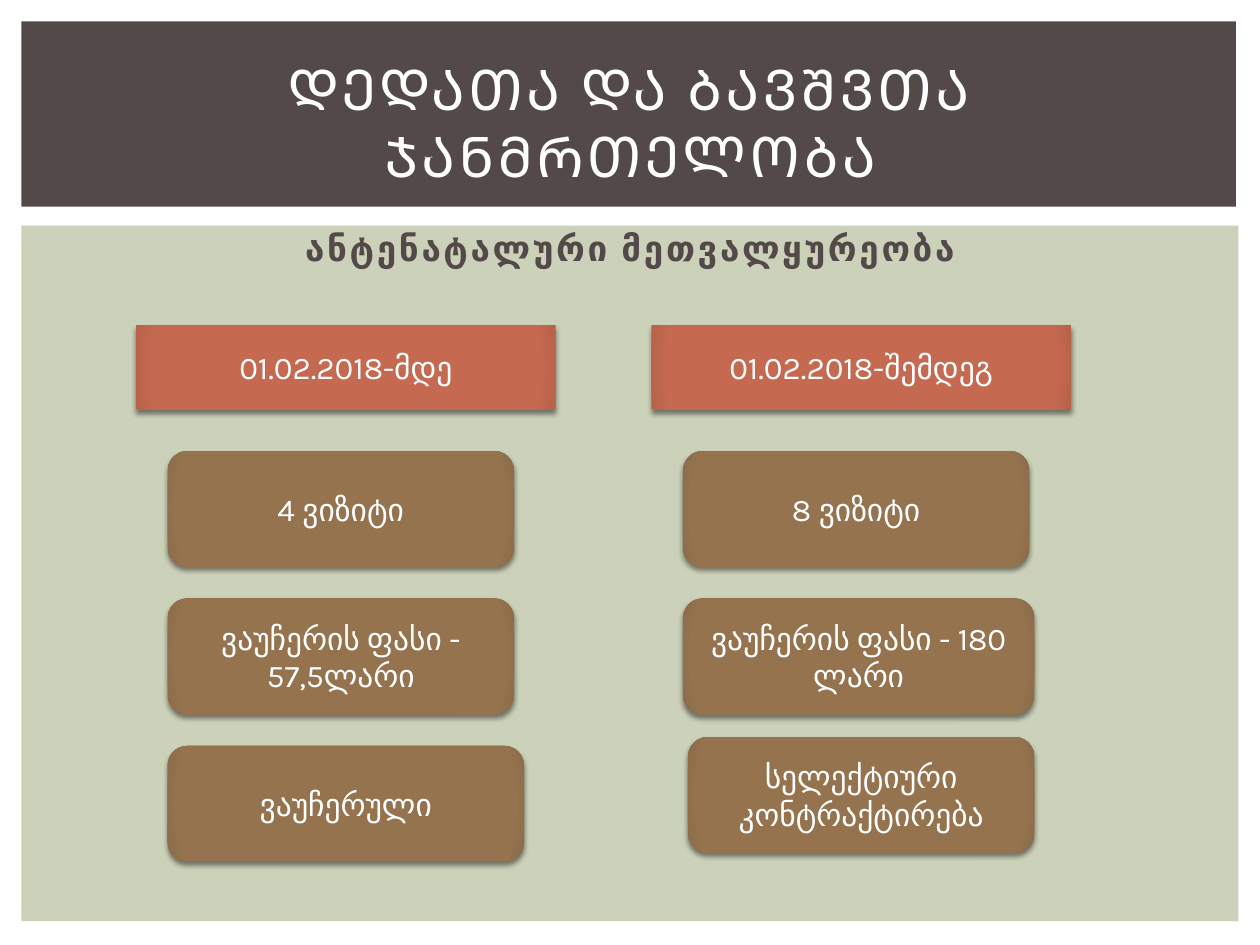
from lxml import etree
from pptx import Presentation
from pptx.dml.color import RGBColor
from pptx.enum.shapes import MSO_SHAPE
from pptx.enum.text import MSO_ANCHOR, PP_ALIGN
from pptx.oxml import parse_xml
from pptx.oxml.ns import qn
from pptx.util import Inches, Pt

RECT, ROUNDED = MSO_SHAPE.RECTANGLE, MSO_SHAPE.ROUNDED_RECTANGLE
TOP, MIDDLE = MSO_ANCHOR.TOP, MSO_ANCHOR.MIDDLE
CENTER = PP_ALIGN.CENTER

WHITE = RGBColor(0xFF, 0xFF, 0xFF)
SAGE = RGBColor(0xCC, 0xD1, 0xB9)
DARK = RGBColor(0x53, 0x49, 0x49)
RED = RGBColor(0xC6, 0x69, 0x51)
RED_EDGE = RGBColor(0xB8, 0x62, 0x4B)
BROWN = RGBColor(0x94, 0x73, 0x4E)
BROWN_EDGE = RGBColor(0x8A, 0x6B, 0x49)

GRADIENT = """<a:gradFill xmlns:a="http://schemas.openxmlformats.org/drawingml/2006/main" rotWithShape="1">
<a:gsLst><a:gs pos="0"><a:srgbClr val="{0}"/></a:gs><a:gs pos="90000"><a:srgbClr val="{0}"/></a:gs>
<a:gs pos="100000"><a:srgbClr val="{1}"/></a:gs></a:gsLst>
<a:path path="circle"><a:fillToRect l="100000" t="100000" r="100000" b="100000"/></a:path></a:gradFill>"""

# Each column: heading left, heading, then (left, top, width, text) of its boxes
COLUMNS = [
    (1.08, "01.02.2018-მდე", [
        (1.33, 3.58, 2.75, "4 ვიზიტი"),
        (1.33, 4.75, 2.75, "ვაუჩერის ფასი - 57,5ლარი"),
        (1.33, 5.92, 2.83, "ვაუჩერული")]),
    (5.17, "01.02.2018-შემდეგ", [
        (5.42, 3.58, 2.75, "8 ვიზიტი"),
        (5.42, 4.75, 2.79, "ვაუჩერის ფასი - 180 ლარი"),
        (5.46, 5.85, 2.75, "სელექტიური კონტრაქტირება")]),
]


class Page:
    font_name = "Karla"

    def __init__(self, slide):
        self.shapes = slide.shapes

    def add_text(self, shape, text, size=18, color=WHITE, bold=False,
                 tracking=0, anchor=MIDDLE, before=0):
        """Put one centred paragraph in the shape; tracking is in points."""
        frame = shape.text_frame
        frame.word_wrap = True
        frame.vertical_anchor = anchor
        para = frame.paragraphs[0]
        para.alignment = CENTER
        para.space_before = Pt(before)
        span = para.add_run()
        span.text = text
        formats = {"name": self.font_name, "size": Pt(size), "bold": bold}
        for name, value in formats.items():
            setattr(span.font, name, value)
        span.font.color.rgb = color
        if tracking:
            span.font._element.set("spc", str(int(tracking * 100)))

    def panel(self, kind, left, top, width, height, color):
        shape = self.shapes.add_shape(
            kind, Inches(left), Inches(top), Inches(width), Inches(height))
        shape.fill.solid()
        shape.fill.fore_color.rgb = color
        shape.line.fill.background()
        shape.shadow.inherit = False
        return shape

    def label(self, left, top, width, height, text, **style):
        box = self.shapes.add_textbox(
            Inches(left), Inches(top), Inches(width), Inches(height))
        self.add_text(box, text, **style)

    def card(self, kind, left, top, width, height, text, color, edge):
        """Draw a panel with a darker edge, a soft shadow and text."""
        shape = self.panel(kind, left, top, width, height, color)
        properties = shape._element.spPr
        properties.replace(properties.find(qn("a:solidFill")),
                           parse_xml(GRADIENT.format(color, edge)))
        shadow = etree.SubElement(
            properties.find(qn("a:effectLst")), qn("a:outerShdw"),
            blurRad=str(Pt(3)), dist=str(Pt(2)), dir="5400000", rotWithShape="0")
        tint = etree.SubElement(shadow, qn("a:srgbClr"), val="000000")
        etree.SubElement(tint, qn("a:alpha"), val="45000")
        self.add_text(shape, text)


def main():
    deck = Presentation()
    deck.slide_width, deck.slide_height = Inches(10), Inches(7.5)
    page = Page(deck.slides.add_slide(deck.slide_layouts[6]))

    page.panel(RECT, 0.17, 1.79, 9.66, 5.52, SAGE)
    page.panel(RECT, 0.17, 0.17, 9.64, 1.47, DARK)
    page.label(0.5, 1.75, 9, 5.67, "ანტენატალური მეთვალყურეობა", size=20,
               color=DARK, bold=True, tracking=1.5, anchor=TOP, before=4)
    page.label(0.42, 0.39, 9.17, 1.15, "ᲓᲔᲓᲐᲗᲐ ᲓᲐ ᲑᲐᲕᲨᲕᲗᲐ ᲯᲐᲜᲛᲠᲗᲔᲚᲝᲑᲐ",
               size=32, tracking=2)

    for heading_left, heading, boxes in COLUMNS:
        page.card(RECT, heading_left, 2.58, 3.33, 0.67, heading, RED, RED_EDGE)
        for left, top, width, text in boxes:
            page.card(ROUNDED, left, top, width, 0.92, text, BROWN, BROWN_EDGE)

    deck.save("out.pptx")


if __name__ == "__main__":
    main()
